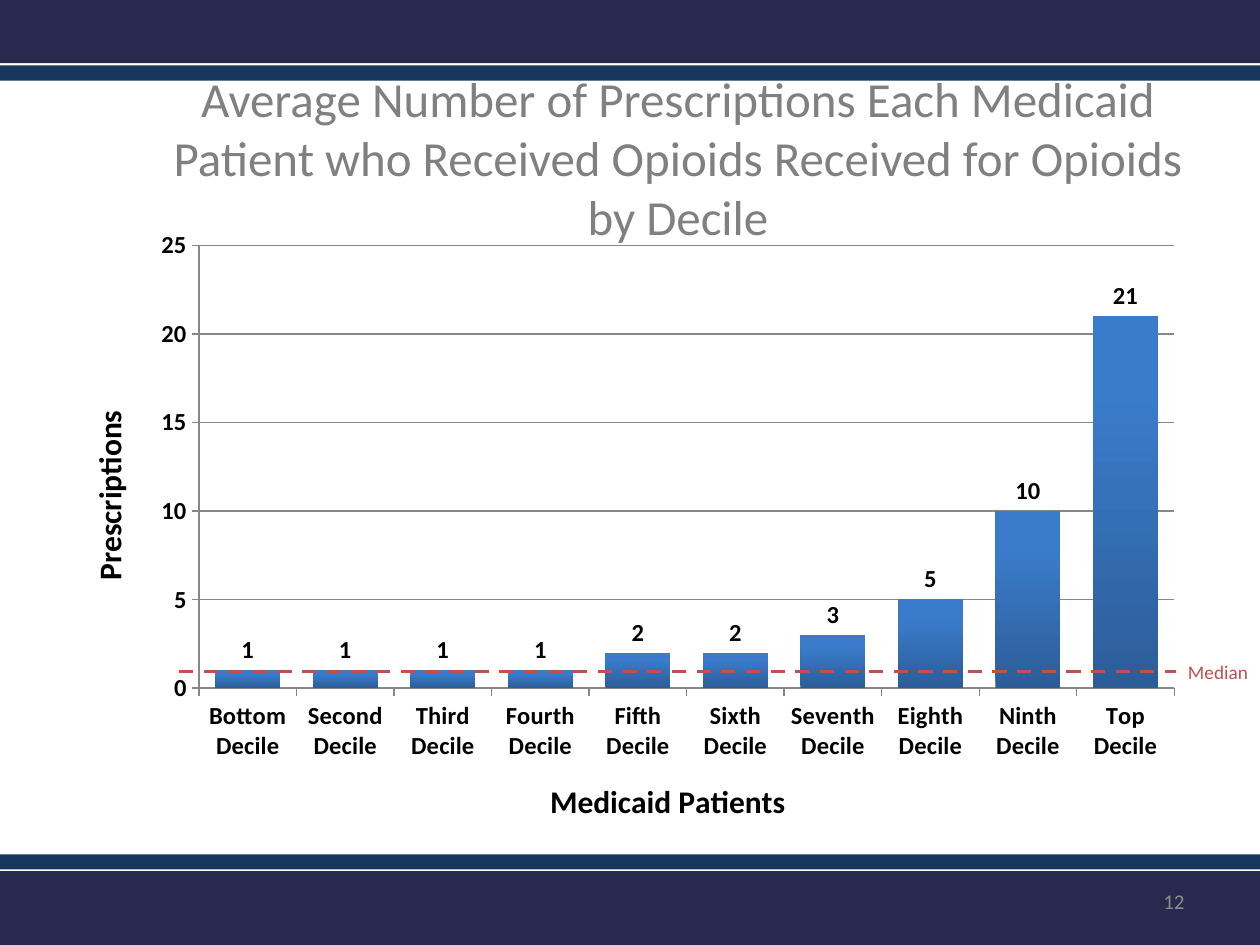
"""Build the slide on Medicaid opioid prescriptions by decile."""
from dataclasses import dataclass

from lxml.etree import SubElement
from pptx import Presentation
from pptx.chart.axis import CategoryAxis, ValueAxis
from pptx.chart.chart import Chart
from pptx.chart.data import CategoryChartData
from pptx.dml.color import RGBColor
from pptx.enum.chart import XL_CHART_TYPE, XL_LABEL_POSITION, XL_TICK_MARK
from pptx.enum.dml import MSO_LINE
from pptx.enum.shapes import MSO_CONNECTOR, MSO_SHAPE
from pptx.enum.text import MSO_ANCHOR, MSO_AUTO_SIZE, PP_ALIGN
from pptx.oxml.ns import qn
from pptx.slide import Slide
from pptx.text.text import Font
from pptx.util import Inches, Pt

SLIDE_WIDTH = Inches(10)
SLIDE_HEIGHT = Inches(7.5)
FONT_NAME = "Calibri"
NAVY, BLUE, RED = "28294E", "17375E", "C0504D"
BLACK, GRAY = "000000", "878787"
TITLE = ("Average Number of Prescriptions Each Medicaid Patient who "
         "Received Opioids Received for Opioids by Decile")
RANKS = ("Bottom", "Second", "Third", "Fourth", "Fifth",
         "Sixth", "Seventh", "Eighth", "Ninth", "Top")
PRESCRIPTIONS = (1, 1, 1, 1, 2, 2, 3, 5, 10, 21)


@dataclass(frozen=True)
class Region:
    """An area in percent of the slide's width and height."""

    left: float
    top: float
    width: float
    height: float

    def box(self) -> tuple[int, int, int, int]:
        return (
            round(SLIDE_WIDTH * self.left / 100),
            round(SLIDE_HEIGHT * self.top / 100),
            round(SLIDE_WIDTH * self.width / 100),
            round(SLIDE_HEIGHT * self.height / 100),
        )


@dataclass(frozen=True)
class Band:
    """A full-width decorative band."""

    top: float
    height: float
    color: str


@dataclass(frozen=True)
class Label:
    """One line of text with its place and look."""

    text: str
    region: Region
    size: float
    color: str
    align: PP_ALIGN
    anchor: MSO_ANCHOR
    wrap: bool


BANDS = (
    Band(0, 6.67, NAVY),
    Band(6.93, 1.6, BLUE),
    Band(92.2, 7.8, NAVY),
    Band(90.4, 1.6, BLUE),
)
TITLE_LABEL = Label(TITLE, Region(11.7, 8.93, 84.2, 15.33), 28, "808080",
                    PP_ALIGN.CENTER, MSO_ANCHOR.MIDDLE, True)
NUMBER_LABEL = Label("12", Region(71.7, 92.67, 23.3, 5.33), 12, "8C8C8C",
                     PP_ALIGN.RIGHT, MSO_ANCHOR.MIDDLE, True)
MEDIAN_LABEL = Label("Median", Region(93.3, 69.2, 7.5, 3.87), 11, RED,
                     PP_ALIGN.LEFT, MSO_ANCHOR.TOP, False)
CHART_REGION = Region(5, 23.33, 90, 66)
MEDIAN_LINE = Region(14.2, 71.07, 79.1, 0)
PLOT_LAYOUT = {"x": 0.12, "y": 0.04, "w": 0.86, "h": 0.71}


def rgb(color: str) -> RGBColor:
    return RGBColor.from_string(color)


def style_font(font: Font, size: float, color: str, bold: bool = False) -> None:
    font.name = FONT_NAME
    font.size = Pt(size)
    font.bold = bold
    font.color.rgb = rgb(color)


def draw_band(slide: Slide, band: Band) -> None:
    region = Region(0, band.top, 100, band.height)
    shape = slide.shapes.add_shape(MSO_SHAPE.RECTANGLE, *region.box())
    shape.shadow.inherit = False
    shape.fill.solid()
    shape.fill.fore_color.rgb = rgb(band.color)
    shape.line.fill.background()


def write_label(shape, label: Label) -> None:
    shape.left, shape.top, shape.width, shape.height = label.region.box()
    frame = shape.text_frame
    frame.word_wrap = label.wrap
    frame.auto_size = MSO_AUTO_SIZE.NONE
    frame.vertical_anchor = label.anchor
    paragraph = frame.paragraphs[0]
    paragraph.alignment = label.align
    run = paragraph.add_run()
    run.text = label.text
    style_font(run.font, label.size, label.color)


def style_axis(axis: CategoryAxis | ValueAxis, title: str) -> None:
    axis.major_tick_mark = XL_TICK_MARK.OUTSIDE
    axis.minor_tick_mark = XL_TICK_MARK.NONE
    axis.format.line.color.rgb = rgb(GRAY)
    axis.format.line.width = Pt(0.75)
    style_font(axis.tick_labels.font, 14, BLACK, bold=True)
    run = axis.axis_title.text_frame.paragraphs[0].add_run()
    run.text = title
    style_font(run.font, 18, BLACK, bold=True)


def place_plot(chart: Chart) -> None:
    plot_area = chart.plots[0]._element.getparent()
    layout = plot_area.find(qn("c:layout"))
    if layout is None:
        layout = SubElement(plot_area, qn("c:layout"))
        plot_area.insert(0, layout)
    manual = SubElement(layout, qn("c:manualLayout"))
    SubElement(manual, qn("c:layoutTarget")).set("val", "inner")
    for side in ("x", "y"):
        SubElement(manual, qn(f"c:{side}Mode")).set("val", "edge")
    for key, share in PLOT_LAYOUT.items():
        SubElement(manual, qn(f"c:{key}")).set("val", str(share))


def draw_chart(slide: Slide) -> None:
    data = CategoryChartData()
    data.categories = [f"{rank} Decile" for rank in RANKS]
    data.add_series("Series 1", PRESCRIPTIONS)
    chart = slide.shapes.add_chart(
        XL_CHART_TYPE.COLUMN_CLUSTERED, *CHART_REGION.box(), data).chart
    chart.has_legend = False
    chart.has_title = False
    style_font(chart.font, 18, BLACK)
    style_axis(chart.category_axis, "Medicaid Patients")
    style_axis(chart.value_axis, "Prescriptions")
    chart.value_axis.minimum_scale = 0
    chart.value_axis.maximum_scale = 25
    chart.value_axis.major_unit = 5
    gridline = chart.value_axis.major_gridlines.format.line
    gridline.color.rgb = rgb(GRAY)
    gridline.width = Pt(0.75)

    plot = chart.plots[0]
    plot.gap_width = 50
    plot.vary_by_categories = False
    plot.has_data_labels = True
    labels = plot.data_labels
    labels.show_value = True
    labels.number_format = "#,##0"
    labels.number_format_is_linked = False
    labels.position = XL_LABEL_POSITION.OUTSIDE_END
    style_font(labels.font, 14, BLACK, bold=True)
    fill = plot.series[0].format.fill
    fill.gradient()
    fill.gradient_angle = 90
    for stop, color, position in zip(
            fill.gradient_stops, ("2C5D98", "3A7CCB"), (0, 0.8)):
        stop.color.rgb = rgb(color)
        stop.position = position
    place_plot(chart)


def draw_median(slide: Slide) -> None:
    left, top, width, height = MEDIAN_LINE.box()
    connector = slide.shapes.add_connector(
        MSO_CONNECTOR.STRAIGHT, left, top, left + width, top + height)
    connector.line.color.rgb = rgb(RED)
    connector.line.width = Pt(2)
    connector.line.dash_style = MSO_LINE.DASH
    SubElement(connector._element.spPr, qn("a:effectLst"))


def main() -> None:
    presentation = Presentation()
    presentation.slide_width = SLIDE_WIDTH
    presentation.slide_height = SLIDE_HEIGHT
    slide = presentation.slides.add_slide(presentation.slide_layouts[5])
    for band in BANDS:
        draw_band(slide, band)
    write_label(slide.shapes.title, TITLE_LABEL)
    draw_chart(slide)
    draw_median(slide)
    for label in (NUMBER_LABEL, MEDIAN_LABEL):
        write_label(slide.shapes.add_textbox(*label.region.box()), label)
    presentation.save("out.pptx")


if __name__ == "__main__":
    main()
